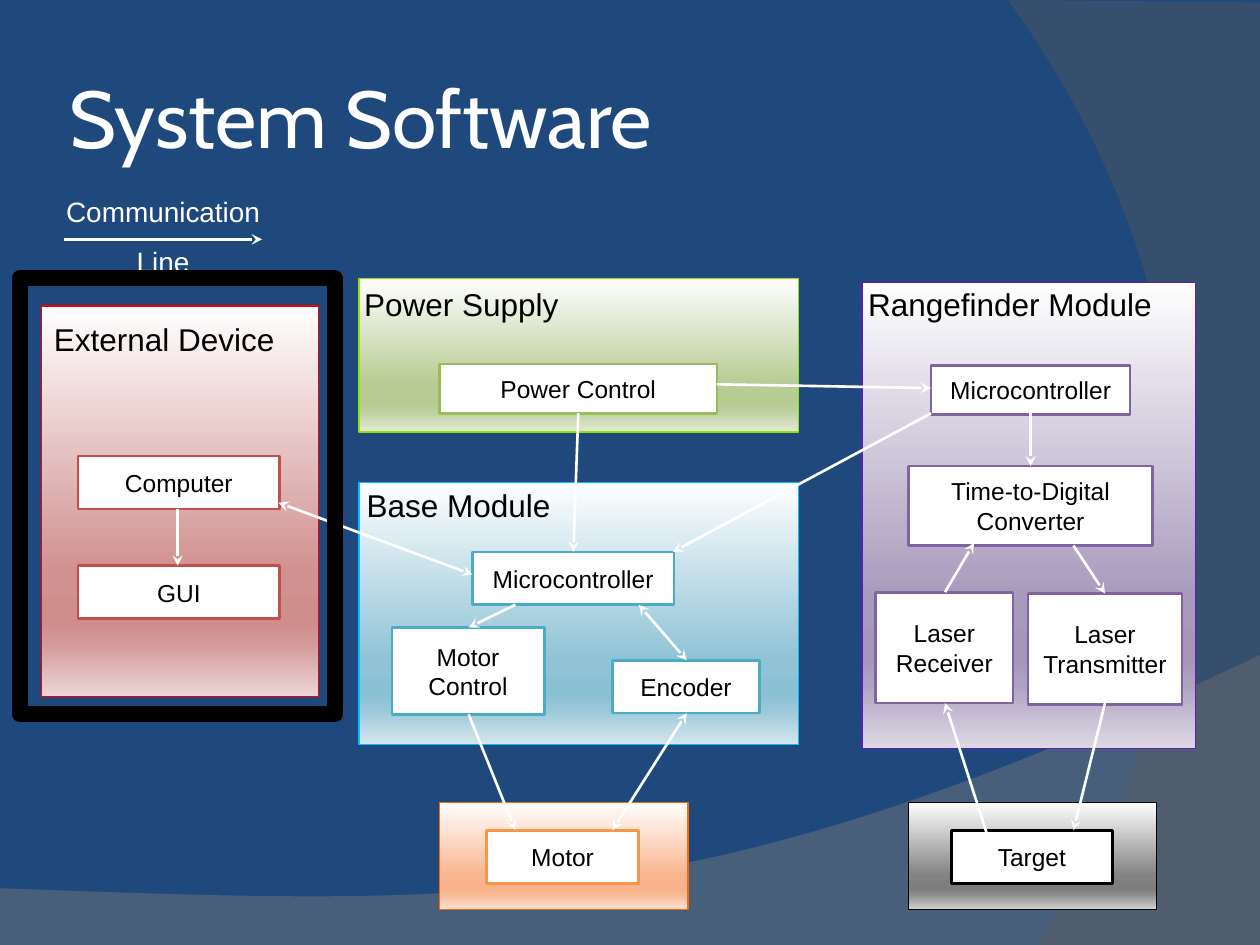
from dataclasses import dataclass

from lxml import etree
from pptx import Presentation
from pptx.dml.color import RGBColor
from pptx.enum import shapes, text
from pptx.oxml import ns
from pptx.util import Inches, Pt

COLORS = {
    "back": "1F497D", "white": "FFFFFF", "black": "000000", "wave": "7B7B7B", "arc": "5A5A5A",
    "red": "C0504D", "green": "9BBB59", "teal": "4BACC6", "purple": "8064A2", "orange": "F79646",
    "red edge": "F30000", "green edge": "94E200", "teal edge": "00C1FD",
    "purple edge": "601DB1", "orange edge": "FF6700", "black edge": "000000",
}
STOPS = (0, 68, 81, 86, 100)
GRADIENTS = {
    "red": "FEFEFE D19190 CF8D8C D39998 EBD6D5",
    "green": "FEFEFE B8CD95 B6CC91 BCD09D E2EAD7",
    "teal": "FEFEFF 8FC3D5 8BC1D4 98C7D7 D5E6ED",
    "purple": "FEFEFE A89ABC A596BA AEA1C1 DDD8E4",
    "orange": "FFFEFE F9B58E F9B289 F9BA96 FCE1D5",
    "black": "FEFEFE 838383 7D7D7D 8D8D8D D2D2D2",
}


@dataclass(frozen=True)
class Module:
    name: str
    theme: str
    at: tuple
    inset: tuple = (0.05, 0.05)


@dataclass(frozen=True)
class Block:
    label: str
    theme: str
    at: tuple


@dataclass(frozen=True)
class Link:
    start: tuple
    end: tuple
    both: bool = False


MODULES = [
    Module("Rangefinder Module", "purple", (6.84, 2.24, 2.65, 3.7), (0.05, 0.02)),
    Module("", "orange", (3.49, 6.37, 1.97, 0.85)),
    Module("", "black", (7.21, 6.37, 1.97, 0.85)),
    Module("External Device", "red", (0.33, 2.43, 2.2, 3.1), (0.1, 0.11)),
    Module("Power Supply", "green", (2.85, 2.21, 3.49, 1.22), (0.04, 0.05)),
    Module("Base Module", "teal", (2.85, 3.83, 3.49, 2.08), (0.06, 0.03)),
]
BLOCKS = [
    Block("Microcontroller", "purple", (7.39, 2.9, 1.58, 0.39)),
    Block("Time-to-Digital\nConverter", "purple", (7.21, 3.7, 1.94, 0.63)),
    Block("Laser\nReceiver", "purple", (6.95, 4.7, 1.09, 0.88)),
    Block("Laser\nTransmitter", "purple", (8.16, 4.71, 1.22, 0.88)),
    Block("Motor", "orange", (3.86, 6.59, 1.21, 0.42)),
    Block("Target", "black", (7.55, 6.59, 1.28, 0.42)),
    Block("Computer", "red", (0.62, 3.62, 1.6, 0.42)),
    Block("GUI", "red", (0.62, 4.49, 1.6, 0.42)),
    Block("Power Control", "green", (3.49, 2.89, 2.2, 0.39)),
    Block("Microcontroller", "teal", (3.75, 4.38, 1.6, 0.42)),
    Block("Motor\nControl", "teal", (3.11, 4.98, 1.21, 0.69)),
    Block("Encoder", "teal", (4.86, 5.24, 1.17, 0.42)),
]
LINKS = [
    Link((0.51, 1.9), (2.08, 1.9)),
    Link((1.41, 4.04), (1.41, 4.49)),
    Link((4.59, 3.28), (4.55, 4.38)),
    Link((4.09, 4.8), (3.72, 4.98)),
    Link((3.72, 5.67), (4.09, 6.59)),
    Link((5.69, 3.05), (7.39, 3.08)),
    Link((8.18, 3.25), (8.18, 3.7)),
    Link((7.5, 4.7), (7.73, 4.31)),
    Link((8.52, 4.33), (8.77, 4.71)),
    Link((8.77, 5.58), (8.52, 6.59)),
    Link((7.83, 6.61), (7.5, 5.58)),
    Link((2.21, 3.99), (3.75, 4.56), both=True),
    Link((7.39, 3.28), (5.34, 4.38)),
    Link((5.07, 4.8), (5.45, 5.24), both=True),
    Link((5.45, 5.66), (4.86, 6.59), both=True),
]


def rgb(name: str) -> RGBColor:
    return RGBColor.from_string(COLORS[name])


def add_xml(parent, tag: str, **attrs):
    return etree.SubElement(parent, ns.qn(tag), attrs)


def write(sp, words: str, size: float, color: str = "black", font: str = "Arial",
          align=text.PP_ALIGN.CENTER, anchor=text.MSO_ANCHOR.MIDDLE,
          inset: tuple = (0.05, 0.05), spacing: float = 1.0) -> None:
    tf = sp.text_frame
    tf.word_wrap = True
    tf.vertical_anchor = anchor
    tf.margin_left = tf.margin_right = Inches(inset[0])
    tf.margin_top = tf.margin_bottom = Inches(inset[1])
    for i, line in enumerate(words.split("\n")):
        p = tf.add_paragraph() if i else tf.paragraphs[0]
        p.alignment = align
        p.line_spacing = spacing
        r = p.add_run()
        r.text = line
        r.font.size = Pt(size)
        r.font.name = font
        r.font.color.rgb = rgb(color)


def add_text(s, at: tuple, words: str, size: float, **style) -> None:
    write(s.shapes.add_textbox(*map(Inches, at)), words, size, "white", **style)


def add_rect(s, at: tuple, edge: str, width: float):
    sp = s.shapes.add_shape(shapes.MSO_SHAPE.RECTANGLE, *map(Inches, at))
    sp.shadow.inherit = False
    sp.line.color.rgb = rgb(edge)
    sp.line.width = Pt(width)
    sp.fill.background()
    return sp


def add_module(s, module: Module) -> None:
    sp = add_rect(s, module.at, module.theme + " edge", 0.75)
    sp.fill.gradient()
    grad = sp.element.spPr.find(ns.qn("a:gradFill"))
    for child in list(grad):
        grad.remove(child)
    stops = add_xml(grad, "a:gsLst")
    for pos, color in zip(STOPS, GRADIENTS[module.theme].split()):
        add_xml(add_xml(stops, "a:gs", pos=str(pos * 1000)), "a:srgbClr", val=color)
    add_xml(grad, "a:lin", ang="5400000", scaled="0")
    if module.name:
        write(sp, module.name, 18, align=text.PP_ALIGN.LEFT,
              anchor=text.MSO_ANCHOR.TOP, inset=module.inset)


def add_block(s, block: Block) -> None:
    sp = add_rect(s, block.at, block.theme, 1.5)
    sp.fill.solid()
    sp.fill.fore_color.rgb = rgb("white")
    write(sp, block.label, 14)


def add_link(s, link: Link) -> None:
    cx = s.shapes.add_connector(shapes.MSO_CONNECTOR.STRAIGHT,
                                *map(Inches, link.start + link.end))
    cx.line.color.rgb = rgb("white")
    cx.line.width = Pt(1.5)
    for tag in ("a:headEnd", "a:tailEnd") if link.both else ("a:tailEnd",):
        add_xml(cx.line._get_or_add_ln(), tag, type="stealth")
    add_xml(cx.element.spPr, "a:effectLst")


def curve(a: tuple, b: tuple, c: tuple, d: tuple, steps: int = 60) -> list:
    """Return points along a cubic Bezier curve."""
    weights = [((1 - t) ** 3, 3 * t * (1 - t) ** 2, 3 * t * t * (1 - t), t ** 3)
               for t in (i / steps for i in range(steps + 1))]
    return [tuple(sum(w * pt[k] for w, pt in zip(ws, (a, b, c, d))) for k in (0, 1))
            for ws in weights]


def add_backdrop(s, points: list, color: str, opacity: int) -> None:
    pts = [(Inches(x), Inches(y)) for x, y in points]
    builder = s.shapes.build_freeform(*pts[0])
    builder.add_line_segments(pts[1:], close=True)
    sp = builder.convert_to_shape()
    sp.shadow.inherit = False
    sp.line.fill.background()
    sp.fill.solid()
    sp.fill.fore_color.rgb = rgb(color)
    fill = sp.element.spPr.find(ns.qn("a:solidFill"))
    add_xml(fill[0], "a:alpha", val=str(opacity * 1000))


def main() -> None:
    """Build the system software diagram."""
    prs = Presentation()
    prs.slide_width, prs.slide_height = Inches(10), Inches(7.5)
    s = prs.slides.add_slide(prs.slide_layouts[6])
    s.background.fill.solid()
    s.background.fill.fore_color.rgb = rgb("back")
    wave = curve((10, 5.2), (5.59, 7.29), (3.91, 7.19), (0, 7.05))
    add_backdrop(s, [(0, 7.5), (10, 7.5)] + wave, "wave", 45)
    arc = curve((8.21, 7.5), (9.35, 6.19), (10.18, 3), (8, 0))
    add_backdrop(s, [(10, 0.02), (10, 7.5)] + arc, "arc", 40)
    add_text(s, (0.5, 0.3, 8.17, 1.25), "System Software", 46, font="Cabin",
             align=text.PP_ALIGN.LEFT)
    for module in MODULES:
        add_module(s, module)
    for block in BLOCKS:
        add_block(s, block)
    add_text(s, (0.38, 1.36, 1.83, 0.89), "Communication Line", 16,
             anchor=text.MSO_ANCHOR.TOP, inset=(0.1, 0.05), spacing=1.5)
    for link in LINKS:
        add_link(s, link)
    add_rect(s, (0.16, 2.21, 2.5, 3.46), "black", 9.25)
    prs.save("out.pptx")


if __name__ == "__main__":
    main()
